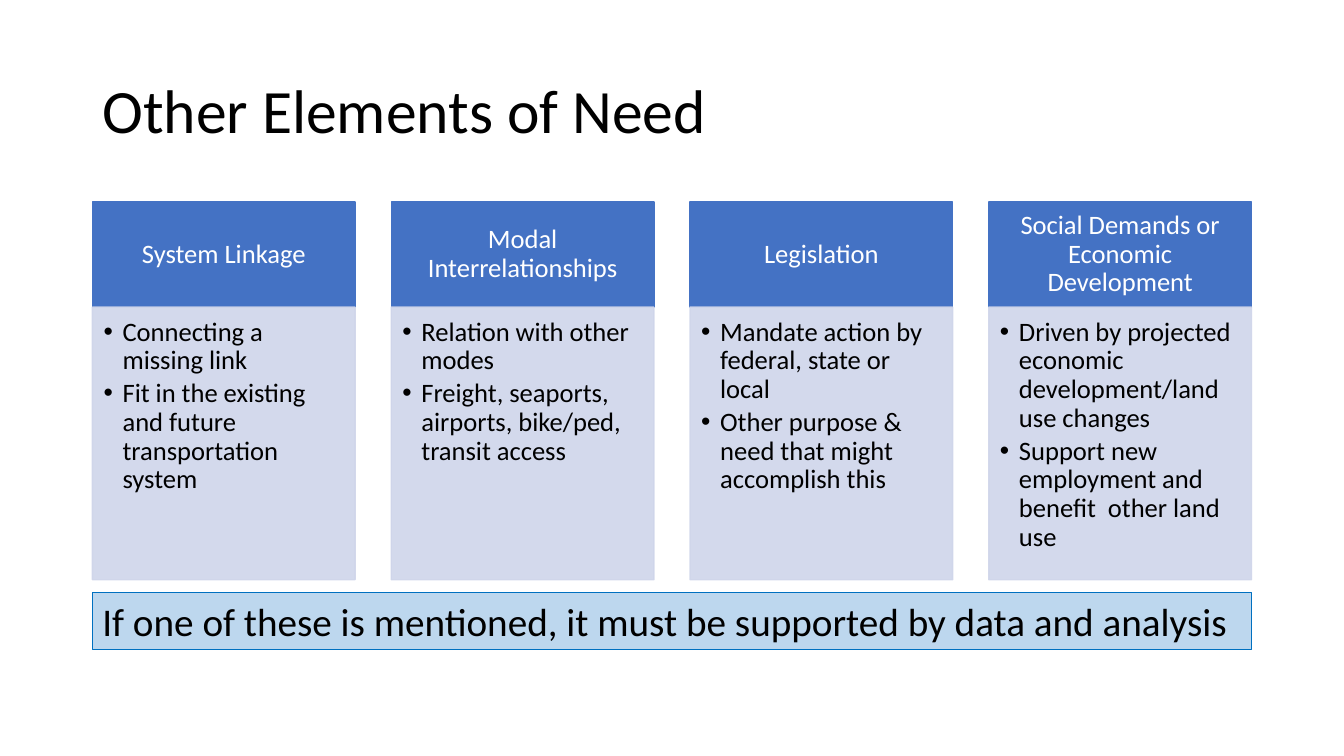
from dataclasses import dataclass

from lxml.etree import SubElement
from pptx import Presentation
from pptx.dml.color import RGBColor
from pptx.enum.shapes import MSO_SHAPE
from pptx.enum.text import MSO_ANCHOR, PP_ALIGN
from pptx.oxml.ns import qn
from pptx.util import Cm, Pt

COLOURS = {
    "black": "000000",
    "white": "FFFFFF",
    "header": "4472C4",
    "body": "CFD5EA",
    "banner": "BDD7EE",
    "banner_line": "0070C0",
}
FONT = "Calibri"
COLUMN_SIZE = 19
HEADER_HEIGHT = 2.65
COLUMN_GAP = 0.91

ELEMENTS = [
    ("System Linkage", [
        "Connecting a missing link",
        "Fit in the existing and future transportation system",
    ]),
    ("Modal Interrelationships", [
        "Relation with other modes",
        "Freight, seaports, airports, bike/ped, transit access",
    ]),
    ("Legislation", [
        "Mandate action by federal, state or local",
        "Other purpose & need that might accomplish this",
    ]),
    ("Social Demands or Economic Development", [
        "Driven by projected economic development/land use changes",
        "Support new employment and benefit  other land use",
    ]),
]


@dataclass
class Box:
    left: float
    top: float
    width: float
    height: float

    def lengths(self):
        return [Cm(value) for value in (self.left, self.top, self.width, self.height)]


def colour(name):
    return RGBColor.from_string(COLOURS[name])


def add_span(para, text, size, colour_name):
    span = para.add_run()
    span.text = text
    span.font.name = FONT
    span.font.size = Pt(size)
    span.font.color.rgb = colour(colour_name)


def add_panel(page, box, fill, line, line_width, anchor):
    panel = page.shapes.add_shape(MSO_SHAPE.RECTANGLE, *box.lengths())
    panel.shadow.inherit = False
    panel.fill.solid()
    panel.fill.fore_color.rgb = colour(fill)
    panel.line.color.rgb = colour(line)
    panel.line.width = Pt(line_width)
    panel.text_frame.word_wrap = True
    panel.text_frame.vertical_anchor = anchor
    return panel


def set_insets(frame, left, top, right, bottom):
    frame.margin_left, frame.margin_top = Cm(left), Cm(top)
    frame.margin_right, frame.margin_bottom = Cm(right), Cm(bottom)


def make_translucent(panel, percent):
    for fill_colour in panel.element.spPr.iter(qn("a:srgbClr")):
        SubElement(fill_colour, qn("a:alpha"), val=str(percent * 1000))


def add_bullet(para):
    properties = para._p.get_or_add_pPr()
    properties.set("marL", str(Cm(0.48)))
    properties.set("indent", str(-Cm(0.48)))
    SubElement(properties, qn("a:buFont"), typeface="Arial")
    SubElement(properties, qn("a:buChar"), char="•")


def place_title(page, box, text):
    title = page.shapes.title
    title.left, title.top, title.width, title.height = box.lengths()
    title.text_frame.vertical_anchor = MSO_ANCHOR.MIDDLE
    para = title.text_frame.paragraphs[0]
    para.alignment = PP_ALIGN.LEFT
    para.line_spacing = 0.9
    add_span(para, text, 44, "black")


def add_column_header(page, box, text):
    panel = add_panel(page, box, "header", "header", 1, MSO_ANCHOR.MIDDLE)
    set_insets(panel.text_frame, 0.38, 0.2, 0.38, 0.2)
    para = panel.text_frame.paragraphs[0]
    para.alignment = PP_ALIGN.CENTER
    para.line_spacing = 0.9
    add_span(para, text, COLUMN_SIZE, "white")


def add_column_body(page, box, points):
    panel = add_panel(page, box, "body", "body", 1, MSO_ANCHOR.TOP)
    make_translucent(panel, 90)
    frame = panel.text_frame
    set_insets(frame, 0.28, 0.28, 0.38, 0.43)
    for index, point in enumerate(points):
        para = frame.add_paragraph() if index else frame.paragraphs[0]
        para.alignment = PP_ALIGN.LEFT
        para.line_spacing = 0.9
        para.space_after = Pt(COLUMN_SIZE * 0.15)
        add_bullet(para)
        add_span(para, point, COLUMN_SIZE, "black")


def add_columns(page, box, elements):
    width = (box.width - COLUMN_GAP * (len(elements) - 1)) / len(elements)
    body_top = box.top + HEADER_HEIGHT
    body_height = box.height - HEADER_HEIGHT
    for index, (heading, points) in enumerate(elements):
        left = box.left + index * (width + COLUMN_GAP)
        add_column_header(page, Box(left, box.top, width, HEADER_HEIGHT), heading)
        add_column_body(page, Box(left, body_top, width, body_height), points)


def add_banner(page, box, text):
    panel = add_panel(page, box, "banner", "banner_line", 0.75, MSO_ANCHOR.TOP)
    para = panel.text_frame.paragraphs[0]
    para.alignment = PP_ALIGN.LEFT
    add_span(para, text, 28, "black")


def main():
    deck = Presentation()
    deck.slide_width, deck.slide_height = Cm(33.87), Cm(19.05)
    page = deck.slides.add_slide(deck.slide_layouts.get_by_name("Title Only"))
    left, width = 2.33, 29.21
    place_title(page, Box(left, 1.01, width, 3.68), "Other Elements of Need")
    add_columns(page, Box(left, 5.09, width, 9.52), ELEMENTS)
    add_banner(page, Box(left, 14.93, width, 1.45),
               "If one of these is mentioned, it must be supported by data and analysis")
    deck.save("out.pptx")


if __name__ == "__main__":
    main()
